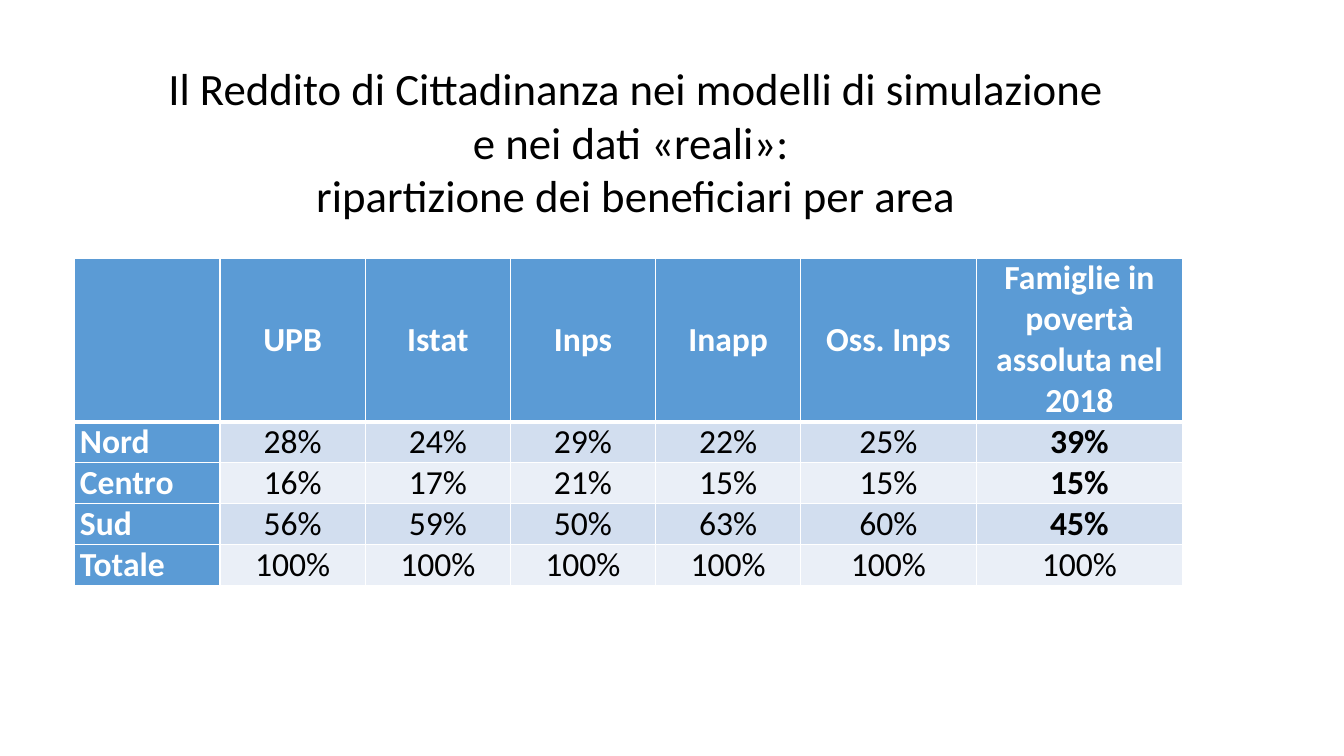
"""Build the slide on the Reddito di Cittadinanza beneficiaries by area."""
from dataclasses import dataclass

from lxml.etree import SubElement
from pptx import Presentation
from pptx.dml.color import RGBColor
from pptx.enum.text import MSO_ANCHOR, MSO_AUTO_SIZE, PP_ALIGN
from pptx.oxml.ns import qn
from pptx.util import Pt

HEADING = [
    "Il Reddito di Cittadinanza nei modelli di simulazione",
    "e nei dati «reali»: ",
    "ripartizione dei beneficiari per area",
]
SOURCES = ["", "UPB", "Istat", "Inps", "Inapp", "Oss. Inps",
           "Famiglie in povertà assoluta nel 2018"]
AREAS = [
    ["Nord", "28%", "24%", "29%", "22%", "25%", "39%"],
    ["Centro", "16%", "17%", "21%", "15%", "15%", "15%"],
    ["Sud", "56%", "59%", "50%", "63%", "60%", "45%"],
    ["Totale"] + ["100%"] * 6,
]


@dataclass(frozen=True)
class Theme:
    font: str = "Calibri"
    heading_size: int = 32
    table_size: int = 24
    ink: str = "000000"
    paper: str = "FFFFFF"
    accent: str = "5B9BD5"
    bands: tuple = ("D2DEEF", "EAEFF7")
    rule: int = 1
    header_rule: int = 3


THEME = Theme()
COLUMN_WIDTHS = [103.7] * 5 + [125.3, 147.6]
ROW_HEIGHTS = [117] + [29.2] * len(AREAS)


def style_runs(paragraph, size, color, bold=False):
    for run in paragraph.runs:
        run.font.name = THEME.font
        run.font.size = Pt(size)
        run.font.bold = bold
        run.font.color.rgb = RGBColor.from_string(color)


def add_heading(slide):
    heading = slide.shapes.title
    heading.left, heading.top, heading.width, heading.height = (
        Pt(95), Pt(39.6), Pt(718.6), Pt(123.8))
    frame = heading.text_frame
    frame.text = "\n".join(HEADING)
    frame.word_wrap = True
    frame.auto_size = MSO_AUTO_SIZE.SHAPE_TO_FIT_TEXT
    frame.vertical_anchor = MSO_ANCHOR.TOP
    for line in frame.paragraphs:
        line.alignment = PP_ALIGN.CENTER
        style_runs(line, THEME.heading_size, THEME.ink)


def draw_borders(cell, top, bottom):
    properties = cell._tc.get_or_add_tcPr()
    widths = {"a:lnL": THEME.rule, "a:lnR": THEME.rule, "a:lnT": top, "a:lnB": bottom}
    for side, width in widths.items():
        border = SubElement(properties, qn(side), w=str(Pt(width)))
        SubElement(SubElement(border, qn("a:solidFill")), qn("a:srgbClr"), val=THEME.paper)


def format_cell(cell, label, row, column):
    is_label = row == 0 or column == 0
    is_poverty_share = column == len(SOURCES) - 1 and row < len(AREAS)
    draw_borders(cell,
                 THEME.header_rule if row == 1 else THEME.rule,
                 THEME.header_rule if row == 0 else THEME.rule)
    cell.fill.solid()
    cell.fill.fore_color.rgb = RGBColor.from_string(
        THEME.accent if is_label else THEME.bands[(row - 1) % 2])
    cell.margin_left = cell.margin_right = Pt(3.6)
    cell.margin_top = cell.margin_bottom = Pt(0)
    cell.vertical_anchor = MSO_ANCHOR.MIDDLE
    cell.text_frame.text = label
    line = cell.text_frame.paragraphs[0]
    line.alignment = PP_ALIGN.LEFT if column == 0 else PP_ALIGN.CENTER
    style_runs(line, THEME.table_size, THEME.paper if is_label else THEME.ink,
               is_label or is_poverty_share)


def add_shares(slide):
    shares = slide.shapes.add_table(
        len(ROW_HEIGHTS), len(COLUMN_WIDTHS), Pt(53.5), Pt(184.3),
        Pt(sum(COLUMN_WIDTHS)), Pt(sum(ROW_HEIGHTS))).table
    shares.first_col = True
    for column, width in zip(shares.columns, COLUMN_WIDTHS):
        column.width = Pt(width)
    for row, height in zip(shares.rows, ROW_HEIGHTS):
        row.height = Pt(height)
    for row, labels in enumerate([SOURCES] + AREAS):
        for column, label in enumerate(labels):
            format_cell(shares.cell(row, column), label, row, column)


def main():
    deck = Presentation()
    deck.slide_width, deck.slide_height = Pt(960), Pt(540)
    slide = deck.slides.add_slide(deck.slide_layouts.get_by_name("Title Only"))
    add_shares(slide)
    add_heading(slide)
    deck.save("out.pptx")


if __name__ == "__main__":
    main()
